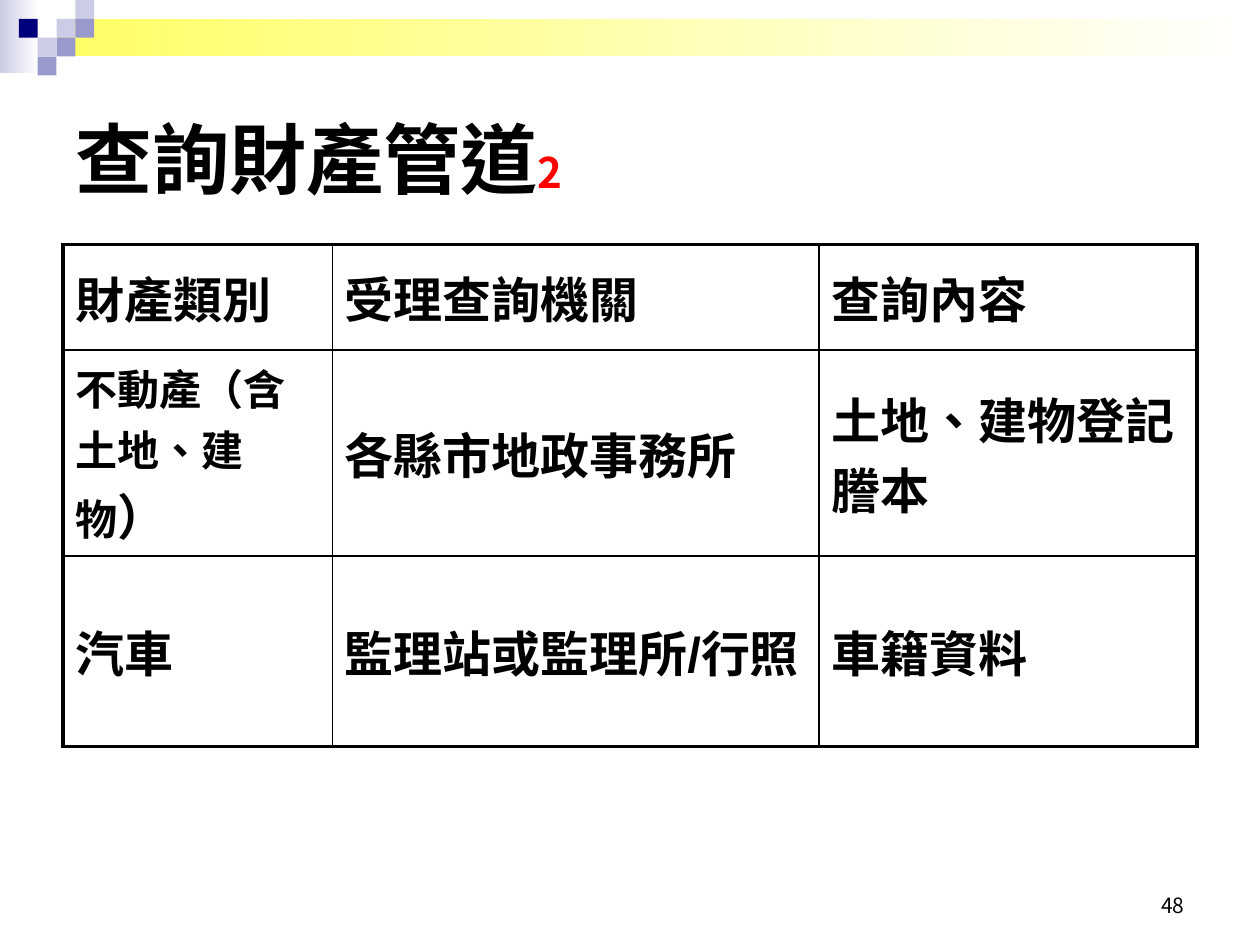
from lxml.etree import SubElement
from pptx import Presentation
from pptx.dml.color import RGBColor
from pptx.enum.shapes import MSO_SHAPE
from pptx.enum.text import MSO_ANCHOR, PP_ALIGN
from pptx.oxml.ns import qn
from pptx.util import Cm, Pt

NOTO, ARIAL = "Noto Sans CJK SC", "Arial"
BLACK, RED, NAVY = "000000", "FF0000", "00007D"
LAVENDER, PERIWINKLE, YELLOW, WHITE = "CCCCE6", "9999CC", "FFFF66", "FFFFFF"

TILE = 0.38
TILES = [  # column, row, colour
    (3, 1, LAVENDER), (4, 0, LAVENDER), (4, 1, PERIWINKLE), (2, 2, LAVENDER),
    (1, 1, NAVY), (3, 2, PERIWINKLE), (2, 3, PERIWINKLE),
]

COLUMN_WIDTHS = [5.43, 9.81, 7.62]
ROW_HEIGHTS = [2.13, 4.15, 3.84]
# Each cell is a list of runs: text, size, font
CELLS = [
    [[("財產類別", 28, NOTO)], [("受理查詢機關", 28, NOTO)], [("查詢內容", 28, NOTO)]],
    [[("不動產", 24, NOTO), ("（含土地、建物", 24, ARIAL), ("）", 28, ARIAL)],
     [("各縣市地政事務所", 28, NOTO)],
     [("土地", 28, NOTO), ("、建物", 28, ARIAL), ("登記謄本", 28, NOTO)]],
    [[("汽車", 28, ARIAL)], [("監理站或監理所/行照", 28, ARIAL)],
     [("車籍資料", 28, ARIAL)]],
]


def rgb(color):
    return RGBColor.from_string(color)


def add_band(slide, left, top, width, height, start, end=None):
    """Add a borderless rectangle, fading from start to end if end is given."""
    band = slide.shapes.add_shape(
        MSO_SHAPE.RECTANGLE, Cm(left), Cm(top), Cm(width), Cm(height))
    band.shadow.inherit = False
    band.line.fill.background()
    if end:
        band.fill.gradient()
        band.fill.gradient_angle = 0
        for stop, color in zip(band.fill.gradient_stops, (start, end)):
            stop.color.rgb = rgb(color)
    else:
        band.fill.solid()
        band.fill.fore_color.rgb = rgb(start)


def add_run(paragraph, text, size, font_name, color=BLACK, bold=False):
    run = paragraph.add_run()
    run.text = text
    run.font.size = Pt(size)
    run.font.bold = bold
    run.font.color.rgb = rgb(color)
    run.font.name = font_name
    run.font._element.set("lang", "zh-TW")
    SubElement(run.font._element, qn("a:ea"), typeface=NOTO)


def add_text(slide, left, top, width, height, anchor, align):
    """Add a wrapping text box and return its empty paragraph."""
    frame = slide.shapes.add_textbox(
        Cm(left), Cm(top), Cm(width), Cm(height)).text_frame
    frame.word_wrap = True
    frame.vertical_anchor = anchor
    paragraph = frame.paragraphs[0]
    paragraph.alignment = align
    return paragraph


def set_borders(cell, widths):
    properties = cell._tc.get_or_add_tcPr()
    for side, width in widths.items():
        line = SubElement(properties, qn(f"a:ln{side}"), w=str(Pt(width)))
        fill = SubElement(line, qn("a:solidFill"))
        SubElement(fill, qn("a:srgbClr"), val=BLACK)


def add_property_table(slide):
    table = slide.shapes.add_table(
        len(ROW_HEIGHTS), len(COLUMN_WIDTHS), Cm(1.27), Cm(4.93),
        Cm(sum(COLUMN_WIDTHS)), Cm(sum(ROW_HEIGHTS))).table
    table.first_row = table.horz_banding = False
    for column, width in zip(table.columns, COLUMN_WIDTHS):
        column.width = Cm(width)
    for row, height in zip(table.rows, ROW_HEIGHTS):
        row.height = Cm(height)

    outer, inner = 2.25, 1
    last_row, last_column = len(ROW_HEIGHTS) - 1, len(COLUMN_WIDTHS) - 1
    for r, row_cells in enumerate(CELLS):
        for c, runs in enumerate(row_cells):
            cell = table.cell(r, c)
            set_borders(cell, {
                "L": outer if c == 0 else inner,
                "R": outer if c == last_column else inner,
                "T": outer if r == 0 else inner,
                "B": outer if r == last_row else inner,
            })
            cell.fill.background()
            cell.vertical_anchor = MSO_ANCHOR.MIDDLE
            paragraph = cell.text_frame.paragraphs[0]
            paragraph.space_before = Pt(5.6)
            for text, size, font_name in runs:
                add_run(paragraph, text, size, font_name, bold=True)


def main():
    presentation = Presentation()
    presentation.slide_width, presentation.slide_height = Cm(25.4), Cm(19.05)
    slide = presentation.slides.add_slide(presentation.slide_layouts[6])

    add_band(slide, 0, 0, 0.79, 1.47, LAVENDER, WHITE)
    add_band(slide, 3 * TILE, TILE, 24.26, 2 * TILE, YELLOW, WHITE)
    for column, row, color in TILES:
        add_band(slide, column * TILE, row * TILE, TILE, TILE, color)

    page_number = add_text(
        slide, 18.21, 17.35, 5.92, 1.27, MSO_ANCHOR.BOTTOM, PP_ALIGN.RIGHT)
    add_run(page_number, "48", 12, NOTO)

    title = add_text(
        slide, 1.27, 1.27, 22.86, 3.81, MSO_ANCHOR.MIDDLE, PP_ALIGN.LEFT)
    add_run(title, "查詢財產管道", 44, ARIAL, bold=True)
    add_run(title, "2", 24, NOTO, RED, bold=True)

    add_property_table(slide)
    presentation.save("out.pptx")


if __name__ == "__main__":
    main()
